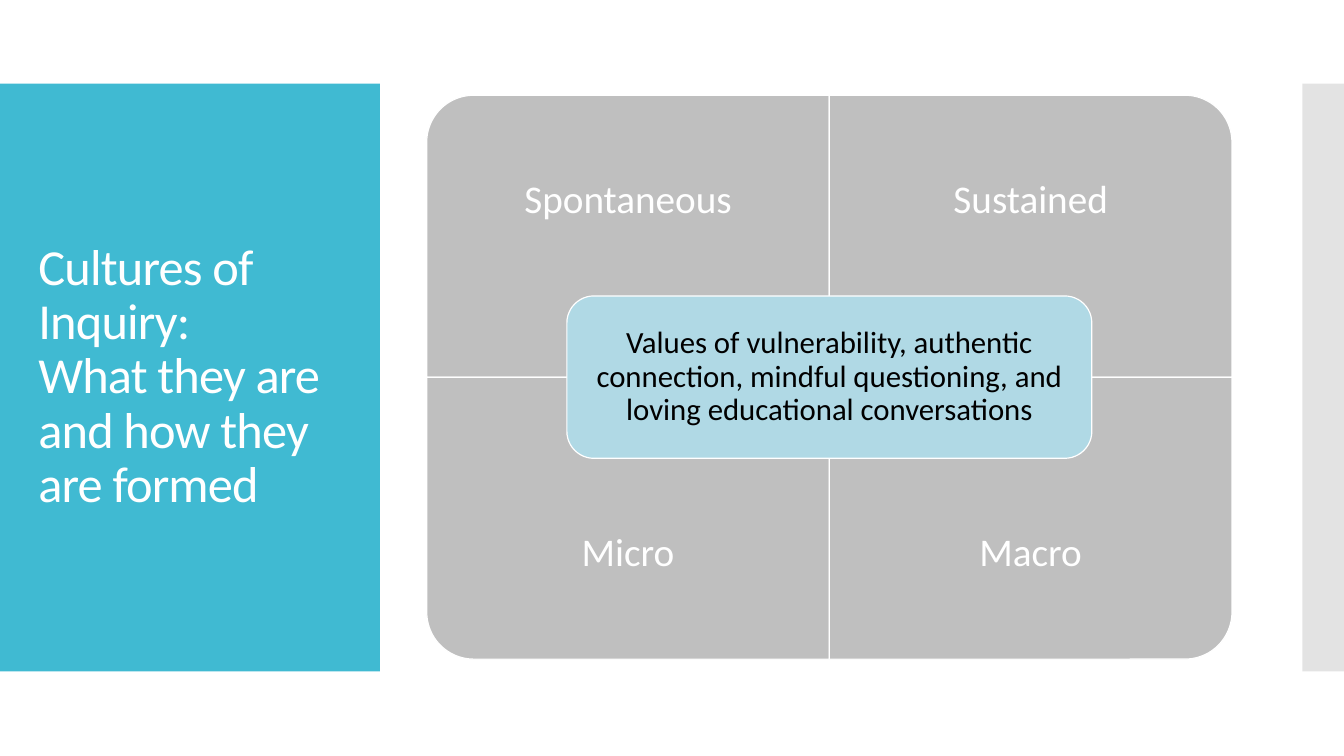
import pptx
import pptx.util
import pptx.dml.color
import pptx.enum.shapes
import pptx.enum.text
import pptx.oxml.ns
import lxml.etree

Pt = pptx.util.Pt
Kind = pptx.enum.shapes.MSO_SHAPE
Align = pptx.enum.text.PP_ALIGN

HUES = {
    "white": "FFFFFF",
    "black": "000000",
    "teal": "40BAD2",
    "edge": "C8C8C8",
    "tile": "BFBFBF",
    "core": "B0D9E5",
}


def hue(name):
    return pptx.dml.color.RGBColor.from_string(HUES[name])


class Page:
    """Holds the text style and the current slide."""

    font = "Calibri"
    lead = 0.9
    rule = 0.85

    def __init__(self, slide):
        self.slide = slide

    def words(self, frame, lines, size, tint, align, pad):
        frame.word_wrap = True
        frame.auto_size = pptx.enum.text.MSO_AUTO_SIZE.NONE
        frame.vertical_anchor = pptx.enum.text.MSO_ANCHOR.MIDDLE
        frame.margin_left = frame.margin_right = Pt(pad[0])
        frame.margin_top = frame.margin_bottom = Pt(pad[1])
        para = frame.paragraphs[0]
        para.alignment = align
        para.line_spacing = self.lead
        for i, line in enumerate(lines):
            if i:
                para.add_line_break()
            run = para.add_run()
            run.text = line
            run.font.name = self.font
            run.font.size = Pt(size)
            run.font.color.rgb = hue(tint)
        return para

    def shape(self, kind, x, y, w, h, fill, line=None, alpha=None, turn=0):
        item = self.slide.shapes.add_shape(kind, Pt(x), Pt(y), Pt(w), Pt(h))
        item.shadow.inherit = False
        item.rotation = turn
        item.fill.solid()
        item.fill.fore_color.rgb = hue(fill)
        if alpha:
            tone = item._element.spPr.find(".//" + pptx.oxml.ns.qn("a:srgbClr"))
            node = lxml.etree.SubElement(tone, pptx.oxml.ns.qn("a:alpha"))
            node.set("val", str(alpha * 1000))
        if line:
            item.line.color.rgb = hue(line)
            item.line.width = Pt(self.rule)
        else:
            item.line.fill.background()
        return item

    def label(self, x, y, w, h, text):
        box = self.slide.shapes.add_textbox(Pt(x), Pt(y), Pt(w), Pt(h))
        self.words(box.text_frame, [text], 28, "white", Align.CENTER, (16, 16))

    def title(self, x, y, w, h, lines):
        head = self.slide.shapes.title
        head.left, head.top, head.width, head.height = Pt(x), Pt(y), Pt(w), Pt(h)
        para = self.words(head.text_frame, lines, 36, "white", Align.LEFT, (7.2, 3.6))
        for run in para.runs:
            run._r.get_or_add_rPr().set("spc", "-60")
        # Bring the title in front of its panel
        head._element.getparent().append(head._element)

    def tile(self, x, y, w, h, turn, fill, line):
        # A quarter turn swaps width and height about the same centre
        wide, high = (h, w) if turn % 180 else (w, h)
        self.shape(Kind.ROUND_1_RECTANGLE, x + (w - wide) / 2, y + (h - high) / 2,
                   wide, high, fill, line, turn=turn)


def main():
    deck = pptx.Presentation()
    deck.slide_width, deck.slide_height = Pt(960), Pt(540)
    page = Page(deck.slides.add_slide(deck.slide_layouts[5]))

    # Side panels and title
    page.shape(Kind.RECTANGLE, 0, 59.8, 271.4, 419.8, "teal")
    page.shape(Kind.RECTANGLE, 930.2, 59.8, 29.8, 419.8, "edge", alpha=50)
    page.title(20.2, 88.6, 231.8, 362.2,
               ["Cultures of Inquiry: ", "What they are and how they are formed"])

    # Four tiles, each with its round corner facing out
    left, top, wide, high = 304.8, 68, 287.6, 201.4
    text = high * 0.75
    tiles = [
        ("Spontaneous", 0, 0, 270),
        ("Sustained", 1, 0, 0),
        ("Micro", 0, 1, 180),
        ("Macro", 1, 1, 90),
    ]
    for name, col, row, turn in tiles:
        x, y = left + col * wide, top + row * high
        page.tile(x, y, wide, high, turn, "tile", "white")
        page.label(x, y + row * (high - text), wide, text, name)

    # Shared values, centred over the tiles
    span, rise = 375, 116
    core = page.shape(Kind.ROUNDED_RECTANGLE, left + wide - span / 2,
                      top + high - rise / 2, span, rise, "core", "white")
    page.words(core.text_frame,
               ["Values of vulnerability, authentic connection, mindful questioning, "
                "and loving educational conversations"],
               22, "black", Align.CENTER, (7, 7))

    deck.save("out.pptx")


if __name__ == "__main__":
    main()
